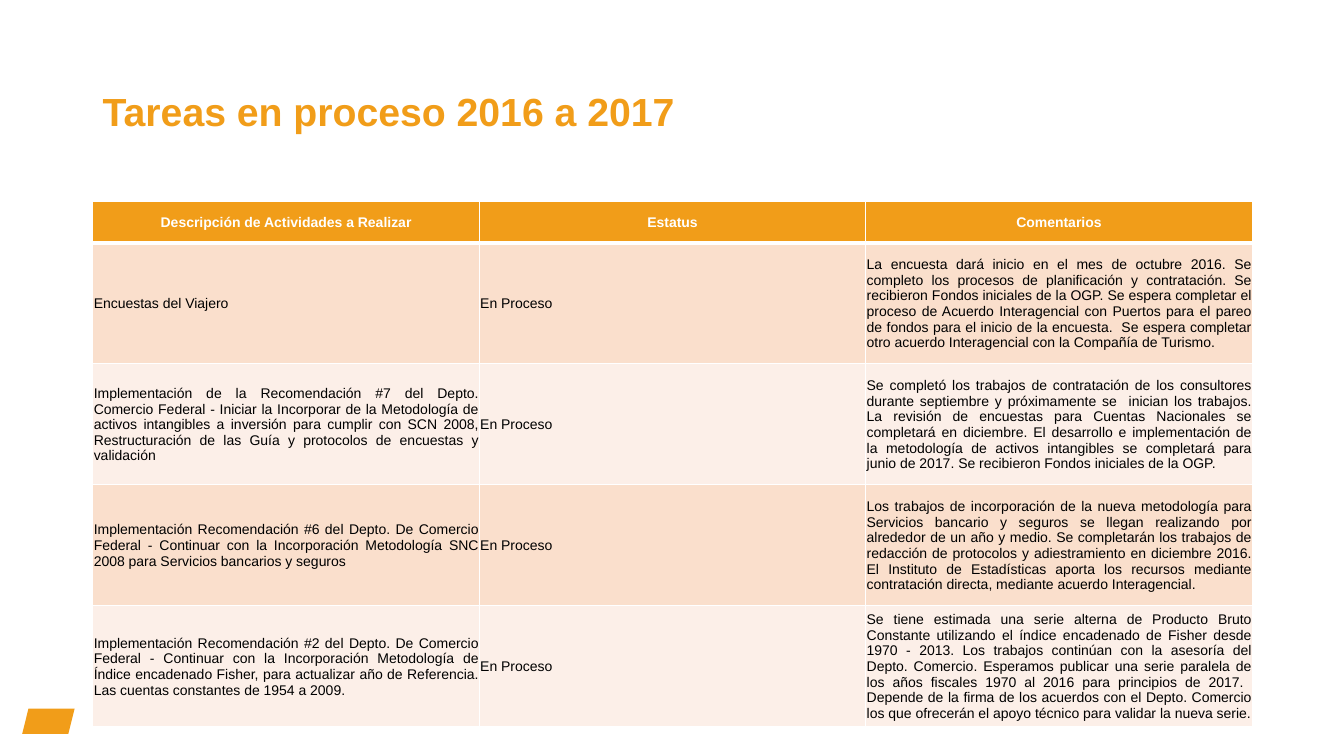
from lxml import etree
from pptx import Presentation
from pptx.dml.color import RGBColor
from pptx.enum.shapes import MSO_SHAPE
from pptx.enum.text import MSO_ANCHOR, PP_ALIGN
from pptx.oxml.ns import qn
from pptx.util import Inches, Pt

MIDDLE = MSO_ANCHOR.MIDDLE
CENTER, JUSTIFY = PP_ALIGN.CENTER, PP_ALIGN.JUSTIFY
PARALLELOGRAM = MSO_SHAPE.PARALLELOGRAM
FONT = "Arial"
COLORS = {"orange": "F19D19", "peach": "FADFCC", "cream": "FCEFE8",
          "white": "FFFFFF", "black": "000000"}

HEADINGS = ["Descripción de Actividades a Realizar", "Estatus", "Comentarios"]
STATUS = "En Proceso"
TASKS = [
    ("Encuestas del Viajero", STATUS,
     "La encuesta dará inicio en el mes de octubre 2016. Se completo los procesos de "
     "planificación y contratación. Se recibieron Fondos iniciales de la OGP. Se espera "
     "completar el proceso de Acuerdo Interagencial con Puertos para el pareo de fondos "
     "para el inicio de la encuesta.  Se espera completar otro acuerdo Interagencial con "
     "la Compañía de Turismo."),
    ("Implementación de la Recomendación #7 del Depto. Comercio Federal - Iniciar la "
     "Incorporar de la Metodología de activos intangibles a inversión para cumplir con "
     "SCN 2008, Restructuración de las Guía y protocolos de encuestas y validación", STATUS,
     "Se completó los trabajos de contratación de los consultores durante septiembre y "
     "próximamente se  inician los trabajos. La revisión de encuestas para Cuentas "
     "Nacionales se completará en diciembre. El desarrollo e implementación de la "
     "metodología de activos intangibles se completará para junio de 2017. Se recibieron "
     "Fondos iniciales de la OGP."),
    ("Implementación Recomendación #6 del Depto. De Comercio Federal - Continuar con la "
     "Incorporación Metodología SNC 2008 para Servicios bancarios y seguros", STATUS,
     "Los trabajos de incorporación de la nueva metodología para Servicios bancario y "
     "seguros se llegan realizando por alrededor de un año y medio. Se completarán los "
     "trabajos de redacción de protocolos y adiestramiento en diciembre 2016. El Instituto "
     "de Estadísticas aporta los recursos mediante contratación directa, mediante acuerdo "
     "Interagencial."),
    ("Implementación Recomendación #2 del Depto. De Comercio Federal - Continuar con la "
     "Incorporación Metodología de Índice encadenado Fisher, para actualizar año de "
     "Referencia. Las cuentas constantes de 1954 a 2009.", STATUS,
     "Se tiene estimada una serie alterna de Producto Bruto Constante utilizando el índice "
     "encadenado de Fisher desde 1970 - 2013. Los trabajos continúan con la asesoría del "
     "Depto. Comercio. Esperamos publicar una serie paralela de los años fiscales 1970 al "
     "2016 para principios de 2017.  Depende de la firma de los acuerdos con el Depto. "
     "Comercio los que ofrecerán el apoyo técnico para validar la nueva serie."),
]


def rgb(name):
    """Return the named palette colour."""
    return RGBColor.from_string(COLORS[name])


def add_run(paragraph, text, size, color, bold=False):
    """Append a formatted run to a paragraph."""
    run = paragraph.add_run()
    run.text = text
    run.font.name = FONT
    run.font.size = Pt(size)
    run.font.bold = bold
    run.font.color.rgb = rgb(color)


def add_title(slide, left, top, width, height):
    """Place the slide title in its box."""
    frame = slide.shapes.add_textbox(left, top, width, height).text_frame
    frame.word_wrap = True
    frame.vertical_anchor = MIDDLE
    heading = frame.paragraphs[0]
    heading.line_spacing = 0.9
    add_run(heading, "Tareas en proceso 2016 a 2017", 28, "orange", True)


def add_emblem(slide, left, top, width, height):
    """Place a plain corner emblem."""
    emblem = slide.shapes.add_shape(PARALLELOGRAM, left, top, width, height)
    emblem.shadow.inherit = False
    emblem.fill.solid()
    emblem.fill.fore_color.rgb = rgb("orange")
    emblem.line.fill.background()


def set_borders(cell, top, bottom):
    """Draw white cell borders, with top and bottom widths in points."""
    properties = cell._tc.get_or_add_tcPr()
    for side, points in (("L", 1), ("R", 1), ("T", top), ("B", bottom)):
        border = etree.SubElement(properties, qn(f"a:ln{side}"), w=str(Pt(points)))
        fill = etree.SubElement(border, qn("a:solidFill"))
        etree.SubElement(fill, qn("a:srgbClr"), val=COLORS["white"])


def fill_cell(cell, text, row):
    """Write and style one cell of the given table row."""
    is_header = row == 0
    background = "orange" if is_header else ("cream", "peach")[row % 2]
    set_borders(cell, 3 if row == 1 else 1, 3 if is_header else 1)
    cell.fill.solid()
    cell.fill.fore_color.rgb = rgb(background)
    cell.vertical_anchor = MIDDLE
    cell.margin_left = cell.margin_right = cell.margin_top = Inches(0.01)
    cell.margin_bottom = 0
    paragraph = cell.text_frame.paragraphs[0]
    paragraph.alignment = CENTER if is_header else JUSTIFY
    add_run(paragraph, text, 10, "white" if is_header else "black", is_header)


def add_task_table(slide, left, top, width, height):
    """Place the task table, with a short header and equal task rows."""
    rows = [HEADINGS, *TASKS]
    header_height = Inches(0.41)
    table = slide.shapes.add_table(len(rows), len(HEADINGS), left, top, width, height).table
    for column in table.columns:
        column.width = width // len(HEADINGS)
    for index, texts in enumerate(rows):
        task_height = (height - header_height) // len(TASKS)
        table.rows[index].height = task_height if index else header_height
        for column, text in enumerate(texts):
            fill_cell(table.cell(index, column), text, index)


def main():
    """Build and save the slide."""
    deck = Presentation()
    deck.slide_width, deck.slide_height = Inches(13.33), Inches(7.5)
    slide = deck.slides.add_slide(deck.slide_layouts[6])
    left, width = Inches(0.92), Inches(11.5)
    add_emblem(slide, Inches(0.22), Inches(7.03), Inches(0.52), Inches(0.25))
    add_title(slide, left, Inches(0.4), width, Inches(1.45))
    add_task_table(slide, left, Inches(2), width, Inches(5.21))
    deck.save("out.pptx")


if __name__ == "__main__":
    main()
